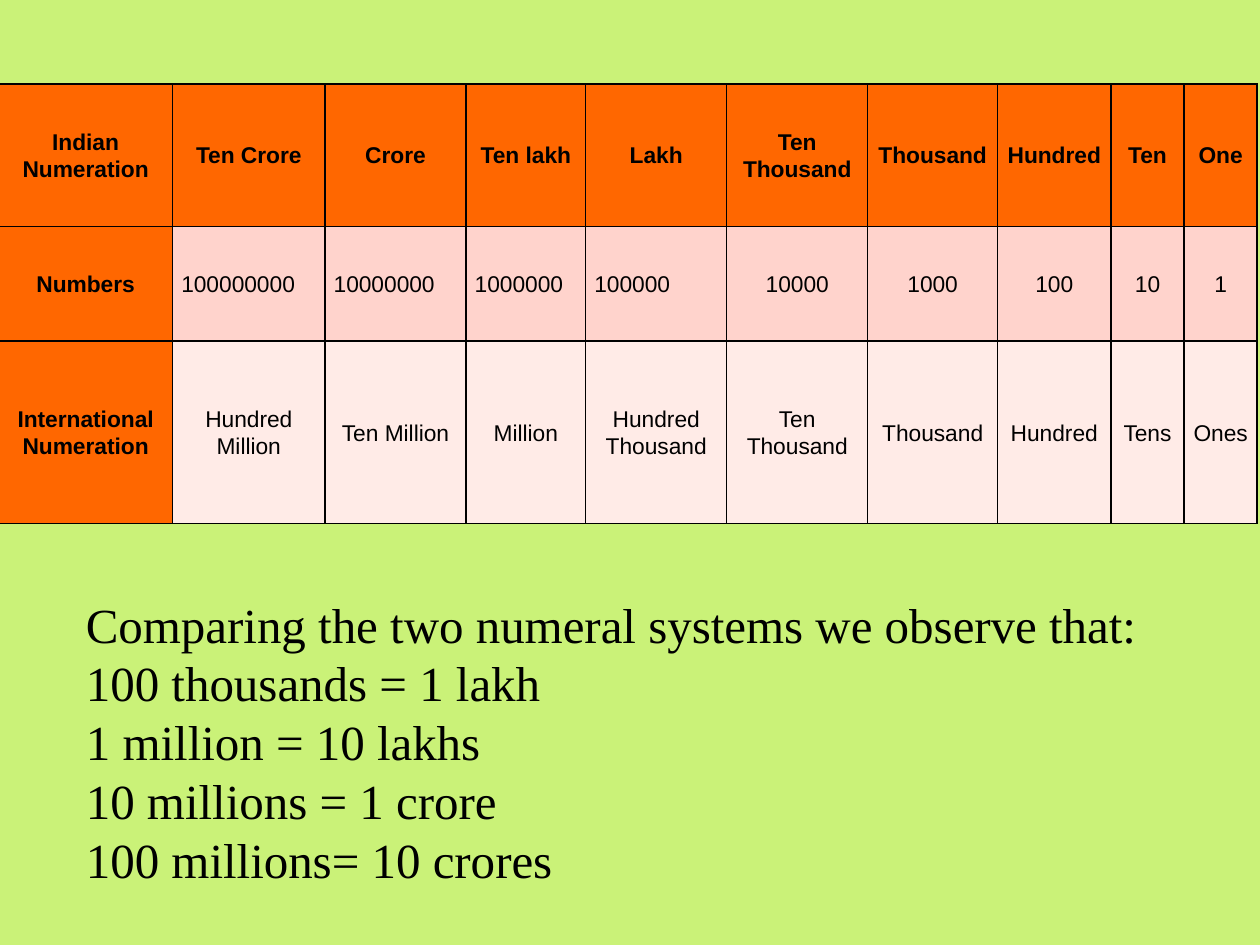
"""Build a slide comparing Indian and international numeration."""
from dataclasses import dataclass

from lxml import etree
from pptx import Presentation
from pptx.dml.color import RGBColor
from pptx.enum.text import MSO_ANCHOR, MSO_AUTO_SIZE, PP_ALIGN
from pptx.oxml.ns import qn
from pptx.slide import Slide
from pptx.util import Pt

LEFT, CENTER = PP_ALIGN.LEFT, PP_ALIGN.CENTER
MIDDLE = MSO_ANCHOR.MIDDLE
GROW = MSO_AUTO_SIZE.SHAPE_TO_FIT_TEXT

LIME = RGBColor(0xCA, 0xF2, 0x78)
ORANGE = RGBColor(0xFF, 0x67, 0x00)
ROSE = RGBColor(0xFF, 0xD3, 0xCC)
BLUSH = RGBColor(0xFF, 0xEB, 0xE7)
BLACK = RGBColor(0, 0, 0)

INDIAN = ["Indian Numeration", "Ten Crore", "Crore", "Ten lakh", "Lakh",
          "Ten Thousand", "Thousand", "Hundred", "Ten", "One"]
NUMBERS = ["Numbers"] + [str(10 ** power) for power in range(8, -1, -1)]
INTERNATIONAL = ["International Numeration", "Hundred Million", "Ten Million",
                 "Million", "Hundred Thousand", "Ten Thousand", "Thousand",
                 "Hundred", "Tens", "Ones"]
PLACE_WIDTHS = [99.4, 87.1, 80.6, 68.4, 80.6, 80.6, 74.2, 64.8, 41.8, 41.8]
SYSTEM_ROWS = [(INDIAN, ORANGE, 81.4), (NUMBERS, ROSE, 65.5),
               (INTERNATIONAL, BLUSH, 104.4)]
LEFT_ALIGNED_NUMBERS = NUMBERS[1:5]
OBSERVATIONS = [
    "Comparing the two numeral systems we observe that:",
    "100 thousands = 1 lakh",
    "1 million = 10 lakhs",
    "10 millions = 1 crore",
    "100 millions= 10 crores",
]


def apply(target, formats):
    for name, value in formats.items():
        setattr(target, name, value)


@dataclass
class NumerationSlide:
    slide: Slide
    table_font: str = "Arial"
    table_size: float = 13
    body_font: str = "Times New Roman"
    body_size: float = 28
    border_width: float = 1

    def background(self, color):
        fill = self.slide.background.fill
        fill.solid()
        fill.fore_color.rgb = color

    def wording(self, paragraph, text, formats):
        paragraph.text = text
        for run in paragraph.runs:
            apply(run.font, formats)
            run.font.color.rgb = BLACK

    def border(self, cell):
        properties = cell._tc.get_or_add_tcPr()
        for side in ("lnL", "lnR", "lnT", "lnB"):
            line = etree.SubElement(properties, qn(f"a:{side}"),
                                    w=str(Pt(self.border_width)))
            fill = etree.SubElement(line, qn("a:solidFill"))
            etree.SubElement(fill, qn("a:srgbClr"), val=str(BLACK))

    def cell(self, cell, text, color, bold, align):
        apply(cell, {"margin_left": Pt(5), "margin_right": Pt(5),
                     "margin_top": 0, "margin_bottom": 0,
                     "vertical_anchor": MIDDLE})
        self.border(cell)
        cell.fill.solid()
        cell.fill.fore_color.rgb = color
        paragraph = cell.text_frame.paragraphs[0]
        apply(paragraph, {"alignment": align, "line_spacing": 1.07})
        self.wording(paragraph, text, {"name": self.table_font,
                                       "size": Pt(self.table_size),
                                       "bold": bold})

    def table(self, left, top, widths, rows):
        height = sum(row_height for _, _, row_height in rows)
        table = self.slide.shapes.add_table(
            len(rows), len(widths), Pt(left), Pt(top),
            Pt(sum(widths)), Pt(height)).table
        apply(table, {"first_row": False, "horz_banding": False})
        for column, width in zip(table.columns, widths):
            column.width = Pt(width)
        for r, (names, color, row_height) in enumerate(rows):
            table.rows[r].height = Pt(row_height)
            for c, name in enumerate(names):
                heading = r == 0 or c == 0
                align = LEFT if name in LEFT_ALIGNED_NUMBERS else CENTER
                self.cell(table.cell(r, c), name,
                          ORANGE if heading else color, heading, align)

    def text(self, left, top, width, height, lines):
        frame = self.slide.shapes.add_textbox(
            Pt(left), Pt(top), Pt(width), Pt(height)).text_frame
        apply(frame, {"word_wrap": True, "auto_size": GROW})
        self.wording(frame.paragraphs[0], "\v".join(lines),
                     {"name": self.body_font, "size": Pt(self.body_size)})


def main():
    presentation = Presentation()
    apply(presentation, {"slide_width": Pt(720), "slide_height": Pt(540)})
    blank = presentation.slide_layouts[6]
    numeration = NumerationSlide(presentation.slides.add_slide(blank))
    numeration.background(LIME)
    numeration.table(-0.8, 48, PLACE_WIDTHS, SYSTEM_ROWS)
    numeration.text(42, 336, 648, 177, OBSERVATIONS)
    presentation.save("out.pptx")


if __name__ == "__main__":
    main()
